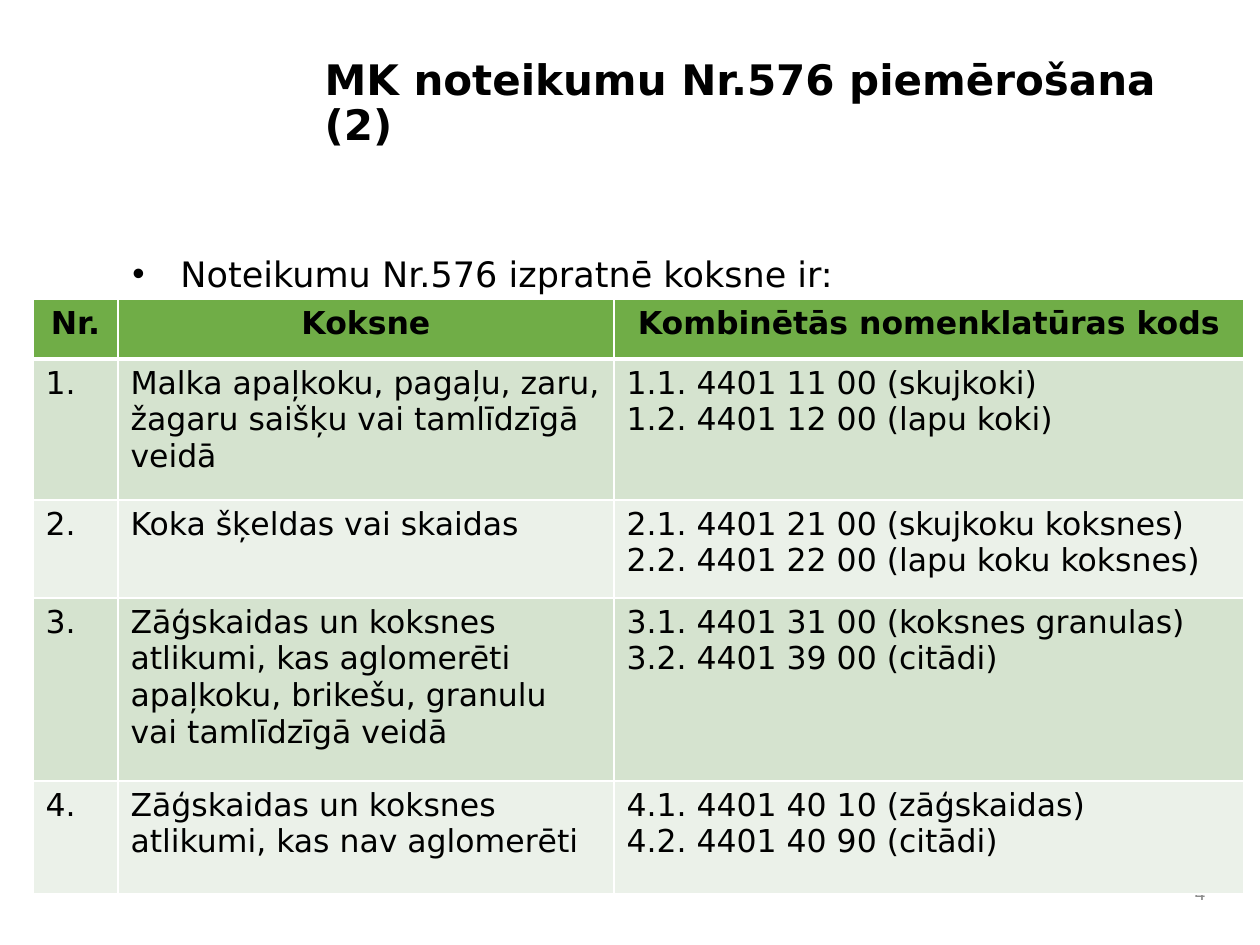
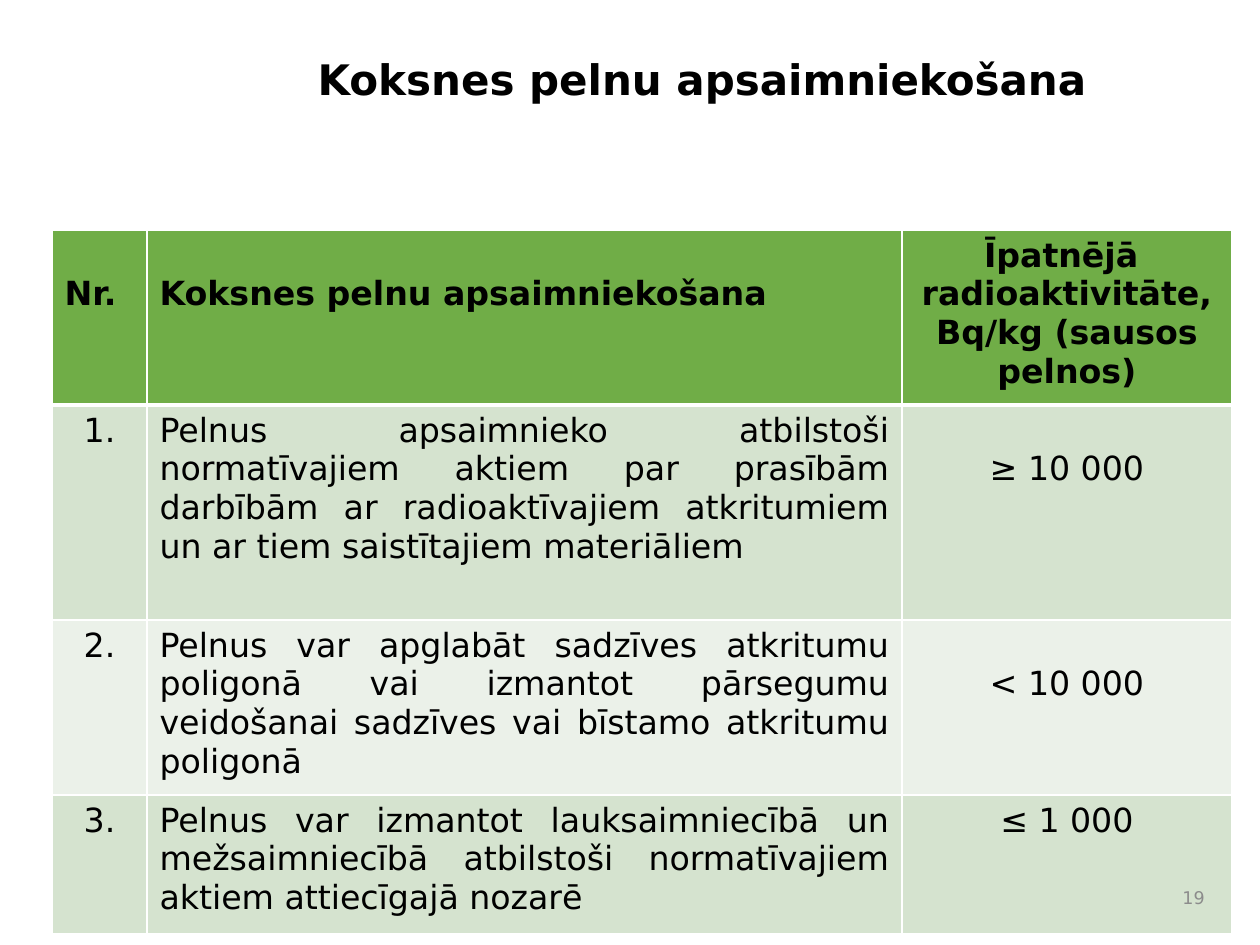
from lxml import etree
from pptx import Presentation
from pptx import util as u
from pptx.dml.color import RGBColor
from pptx.enum import text
from pptx.oxml import ns

SCALE = 914400 / 126
FONT = "DejaVu Sans"
BLACK = RGBColor(0x00, 0x00, 0x00)
GREY = RGBColor(0x8C, 0x8C, 0x8C)
WHITE = RGBColor(0xFF, 0xFF, 0xFF)
GREEN = RGBColor(0x70, 0xAD, 0x47)
BANDS = [RGBColor(0xEB, 0xF1, 0xE9), RGBColor(0xD5, 0xE3, 0xCF)]
LEFT = text.PP_ALIGN.LEFT
MID = text.PP_ALIGN.CENTER
RIGHT = text.PP_ALIGN.RIGHT
FULL = text.PP_ALIGN.JUSTIFY

WOOD = [
    ["Nr.", "Koksne", "Kombinētās nomenklatūras kods"],
    ["1.", "Malka apaļkoku, pagaļu, zaru, žagaru saišķu vai tamlīdzīgā veidā",
     "1.1. 4401 11 00 (skujkoki)\n1.2. 4401 12 00 (lapu koki)"],
    ["2.", "Koka šķeldas vai skaidas",
     "2.1. 4401 21 00 (skujkoku koksnes)\n2.2. 4401 22 00 (lapu koku koksnes)"],
    ["3.", "Zāģskaidas un koksnes atlikumi, kas aglomerēti apaļkoku, brikešu, "
     "granulu vai tamlīdzīgā veidā ",
     "3.1. 4401 31 00 (koksnes granulas)\n3.2. 4401 39 00 (citādi)"],
    ["4.", "Zāģskaidas un koksnes atlikumi, kas nav aglomerēti ",
     "4.1. 4401 40 10 (zāģskaidas)\n4.2. 4401 40 90 (citādi)"],
]
ASH = [
    ["Nr.", "Koksnes pelnu apsaimniekošana",
     "Īpatnējā \nradioaktivitāte, Bq/kg (sausos pelnos)"],
    ["1.", "Pelnus apsaimnieko atbilstoši normatīvajiem aktiem par prasībām "
     "darbībām ar radioaktīvajiem atkritumiem un ar tiem saistītajiem materiāliem",
     "≥ 10 000"],
    ["2.", "Pelnus var apglabāt sadzīves atkritumu poligonā vai izmantot pārsegumu "
     "veidošanai sadzīves vai bīstamo atkritumu poligonā", "< 10 000"],
    ["3.", "Pelnus var izmantot lauksaimniecībā un mežsaimniecībā atbilstoši "
     "normatīvajiem aktiem attiecīgajā nozarē", "≤ 1 000"],
]


def px(n):
    """Turn px into EMU."""
    return u.Emu(round(n * SCALE))


def write(frame, words, size, color=BLACK, bold=False, align=LEFT):
    """Fill a text frame with one paragraph per line of words."""
    frame.word_wrap = True
    for i, line in enumerate(words.split("\n")):
        para = frame.add_paragraph() if i else frame.paragraphs[0]
        para.alignment = align
        run = para.add_run()
        run.text = line
        font = run.font
        font.name, font.size, font.bold = FONT, u.Pt(size), bold
        font.color.rgb = color


def start(deck, words, left, top, width, height):
    """Add a slide with its title."""
    slide = deck.slides.add_slide(deck.slide_layouts[5])
    title = slide.shapes.title
    title.left, title.top = px(left), px(top)
    title.width, title.height = px(width), px(height)
    frame = title.text_frame
    frame.auto_size = text.MSO_AUTO_SIZE.NONE
    frame.vertical_anchor = text.MSO_ANCHOR.TOP
    write(frame, words, 24, bold=True)
    frame.paragraphs[0].line_spacing = 0.9
    return slide


def box(slide, left, top, width, height):
    """Add an empty text box and return its frame."""
    return slide.shapes.add_textbox(
        px(left), px(top), px(width), px(height)).text_frame


def point(slide, words):
    """Add the bulleted line above a table."""
    frame = box(slide, 120, 238, 1077, 654)
    para = frame.paragraphs[0]
    props = para._p.get_or_add_pPr()
    props.set("marL", str(px(48)))
    props.set("indent", str(px(-48)))
    etree.SubElement(props, ns.qn("a:buFont"), typeface="Arial")
    etree.SubElement(props, ns.qn("a:buChar"), char="•")
    write(frame, words, 20, align=FULL)
    para.line_spacing = 1.2


def number(slide, words, left, width, height):
    """Add the page number."""
    frame = box(slide, left, 872, width, height)
    frame.vertical_anchor = text.MSO_ANCHOR.MIDDLE
    write(frame, words, 10, GREY, align=RIGHT)


def edge(cell, thick):
    """Draw white cell borders, heavier on the named sides."""
    props = cell._tc.get_or_add_tcPr()
    for i, side in enumerate("LRTB"):
        line = etree.Element(ns.qn("a:ln" + side))
        line.set("w", str(u.Pt(3 if side in thick else 1)))
        fill = etree.SubElement(line, ns.qn("a:solidFill"))
        etree.SubElement(fill, ns.qn("a:srgbClr"), val=str(WHITE))
        props.insert(i, line)


def grid(slide, left, top, cols, rows, data, size, heads, aligns, drops=()):
    """Add a banded table; cells in drops start one line lower."""
    table = slide.shapes.add_table(
        len(rows), len(cols), px(left), px(top),
        px(sum(cols)), px(sum(rows))).table
    for col, width in zip(table.columns, cols):
        col.width = px(width)
    for r, height in enumerate(rows):
        table.rows[r].height = px(height)
        for c, words in enumerate(data[r]):
            cell = table.cell(r, c)
            cell.fill.solid()
            cell.fill.fore_color.rgb = BANDS[r % 2] if r else GREEN
            edge(cell, {0: "B", 1: "T"}.get(r, ""))
            if (r, c) in drops:
                cell.margin_top = px(45)
            write(cell.text_frame, words, size, bold=r == 0,
                  align=(aligns if r else heads)[c])


def main():
    """Build and save the deck."""
    deck = Presentation()
    deck.slide_width, deck.slide_height = px(1260), px(945)

    slide = start(deck, "MK noteikumu Nr.576 piemērošana (2)", 312, 53, 931, 122)
    point(slide, "Noteikumu Nr.576 izpratnē koksne ir:")
    number(slide, "4", 1176, 42, 42)
    grid(slide, 33, 299, [85, 496, 630], [60, 141, 98, 183, 113], WOOD, 18,
         [MID] * 3, [LEFT] * 3)

    slide = start(deck, "Koksnes pelnu apsaimniekošana ", 305, 53, 892, 132)
    grid(slide, 52, 230, [95, 755, 330], [175, 215, 175, 139], ASH, 19,
         [LEFT, LEFT, MID], [MID, FULL, MID], [(0, 0), (0, 1), (1, 2), (2, 2)])
    number(slide, "19", 1134, 83, 52)

    deck.save("out.pptx")


if __name__ == "__main__":
    main()
